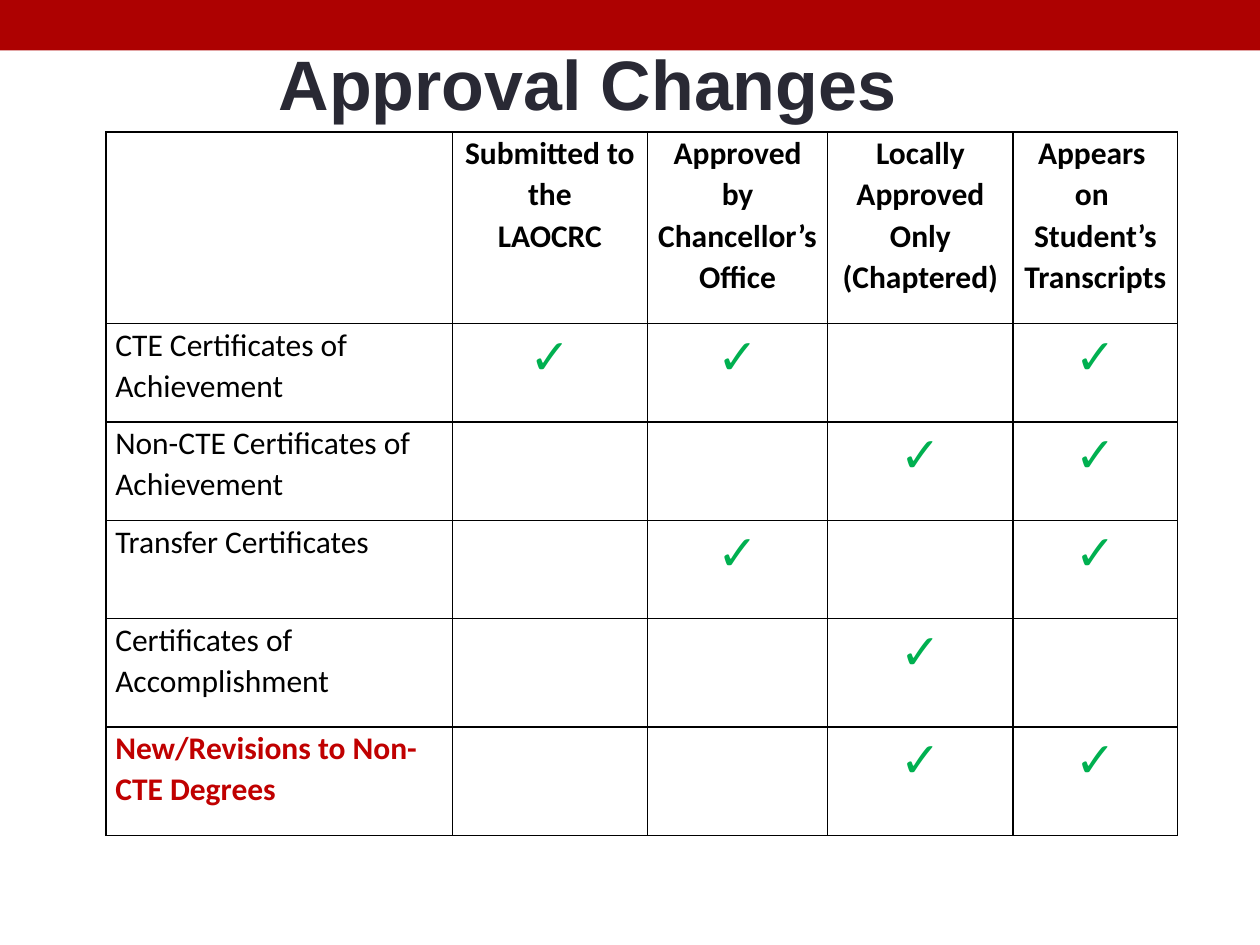
from lxml.etree import SubElement
from pptx import Presentation
from pptx.dml.color import RGBColor
from pptx.enum.shapes import MSO_SHAPE
from pptx.enum.text import MSO_ANCHOR, MSO_AUTO_SIZE, PP_ALIGN
from pptx.oxml.ns import qn
from pptx.util import Pt

BANNER_RED = RGBColor(0xAD, 0x01, 0x01)
TITLE_INK = RGBColor(0x29, 0x29, 0x34)
BLACK = RGBColor(0, 0, 0)
NEW_RED = RGBColor(0xC0, 0, 0)
CHECK_GREEN = RGBColor(0, 0xB0, 0x50)

TITLE = "Approval Changes"
# \n starts a paragraph, \v breaks a line within one
HEADINGS = [
    "",
    "Submitted to the\vLAOCRC",
    "Approved by\vChancellor’s\nOffice",
    "Locally Approved\nOnly\n(Chaptered)",
    "Appears \von \vStudent’s Transcripts",
]
# award, columns that hold a check, newly added
AWARDS = [
    ("CTE Certificates of Achievement", (1, 2, 4), False),
    ("Non-CTE Certificates of Achievement", (3, 4), False),
    ("Transfer Certificates", (2, 4), False),
    ("Certificates of Accomplishment", (3,), False),
    ("New/Revisions to Non-CTE Degrees", (3, 4), True),
]
COLUMN_WIDTHS = [198, 111.5, 103, 106, 94]
ROW_HEIGHTS = [109.5, 56.2, 56.2, 56.2, 62, 62]
TABLE_LEFT, TABLE_TOP = 60.5, 75.5


def style_font(font, name, size, color, bold):
    font.name, font.size, font.bold = name, Pt(size), bold
    font.color.rgb = color


def frame_cell(cell):
    """Give the cell thin black borders and no fill."""
    properties = cell._tc.get_or_add_tcPr()
    for side in ("lnL", "lnR", "lnT", "lnB"):
        line = SubElement(properties, qn(f"a:{side}"), w=str(Pt(1)))
        fill = SubElement(line, qn("a:solidFill"))
        SubElement(fill, qn("a:srgbClr"), val=str(BLACK))
    cell.fill.background()


def write_label(cell, label, color, bold, align):
    cell.margin_left = cell.margin_right = Pt(5.4)
    cell.margin_top = cell.margin_bottom = 0
    cell.text = label
    for paragraph in cell.text_frame.paragraphs:
        paragraph.alignment = align
        paragraph.line_spacing = 1.07
        style_font(paragraph.font, "Calibri", 18, color, bold)


def write_check(cell):
    cell.text = "✓"
    paragraph = cell.text_frame.paragraphs[0]
    paragraph.alignment = PP_ALIGN.CENTER
    style_font(paragraph.font, "Arial", 28, CHECK_GREEN, True)


def add_banner(slide, width):
    banner = slide.shapes.add_shape(MSO_SHAPE.RECTANGLE, 0, 0, width, Pt(28.8))
    banner.shadow.inherit = False
    banner.fill.solid()
    banner.fill.fore_color.rgb = BANNER_RED
    banner.line.fill.background()


def add_approvals(slide):
    table = slide.shapes.add_table(
        len(ROW_HEIGHTS), len(COLUMN_WIDTHS), Pt(TABLE_LEFT), Pt(TABLE_TOP),
        Pt(sum(COLUMN_WIDTHS)), Pt(sum(ROW_HEIGHTS))).table
    table.first_row = table.horz_banding = False
    for column, width in zip(table.columns, COLUMN_WIDTHS):
        column.width = Pt(width)
    for row, height in zip(table.rows, ROW_HEIGHTS):
        row.height = Pt(height)
    for cell in table.iter_cells():
        frame_cell(cell)

    for column, heading in enumerate(HEADINGS):
        write_label(table.cell(0, column), heading, BLACK, True, PP_ALIGN.CENTER)
    for row, (award, checked, is_new) in enumerate(AWARDS, start=1):
        write_label(table.cell(row, 0), award, NEW_RED if is_new else BLACK,
                    is_new, PP_ALIGN.LEFT)
        for column in checked:
            write_check(table.cell(row, column))


def place_title(slide):
    title = slide.shapes.title
    title.left, title.top, title.width, title.height = Pt(152), Pt(19.5), Pt(551.5), Pt(55.5)
    title.text = TITLE
    frame = title.text_frame
    frame.auto_size = MSO_AUTO_SIZE.NONE
    frame.vertical_anchor = MSO_ANCHOR.TOP
    frame.paragraphs[0].alignment = PP_ALIGN.LEFT
    style_font(frame.paragraphs[0].font, "Arial", 40, TITLE_INK, True)


def main():
    deck = Presentation()
    deck.slide_width, deck.slide_height = Pt(720), Pt(540)
    slide = deck.slides.add_slide(deck.slide_layouts[5])
    add_banner(slide, deck.slide_width)
    add_approvals(slide)
    place_title(slide)
    deck.save("out.pptx")


if __name__ == "__main__":
    main()
